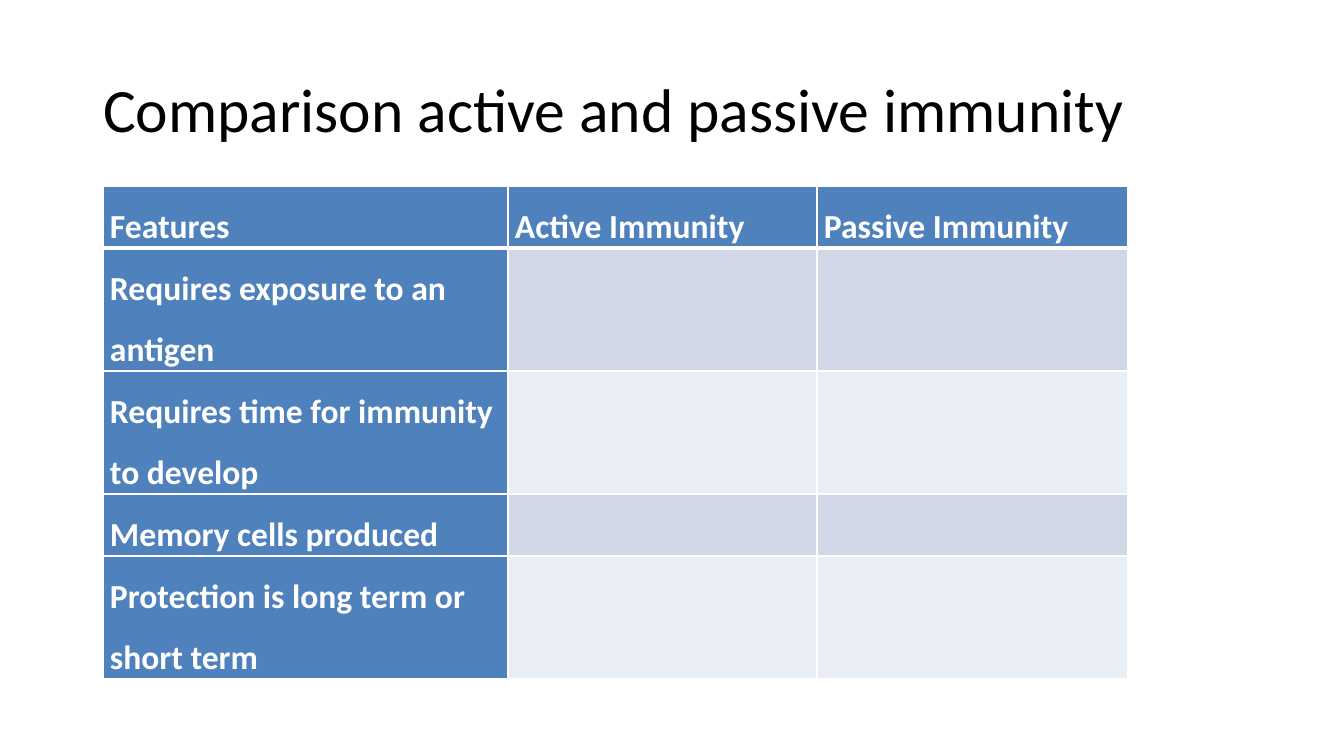
from lxml import etree
from pptx import Presentation
from pptx.dml.color import RGBColor
from pptx.enum.text import MSO_ANCHOR, PP_ALIGN
from pptx.oxml.ns import qn
from pptx.util import Pt

TOP, MIDDLE = MSO_ANCHOR.TOP, MSO_ANCHOR.MIDDLE
LEFT = PP_ALIGN.LEFT

TITLE = "Comparison active and passive immunity"
HEADERS = ["Features", "Active Immunity", "Passive Immunity"]
FEATURES = [
    "Requires exposure to an antigen",
    "Requires time for immunity to develop",
    "Memory cells produced",
    "Protection is long term or short term",
]
ROWS = [HEADERS] + [[feature, "", ""] for feature in FEATURES]

SLIDE_SIZE = (1344, 756)
TITLE_BOX = (93, 40, 1159, 146)
TABLE_ORIGIN = (103, 186)
COLUMN_WIDTHS = [405, 309, 311]
ROW_HEIGHTS = [62, 115, 115, 62, 115]

BLACK, WHITE, BLUE = "000000", "FFFFFF", "4F81BD"
BANDS = ["D0D8E8", "E9EDF4"]
TITLE_FONT = {"name": "Calibri", "size": Pt(44), "bold": False}
CELL_FONT = {"name": "Calibri", "size": Pt(24), "bold": True}
TITLE_PARA = {"alignment": LEFT, "line_spacing": 0.9}
CELL_PARA = {"alignment": LEFT, "line_spacing": 1.5, "space_after": Pt(8)}


def px(length):
    return round(length * 914400 / 100.8)


def color(value):
    return RGBColor.from_string(value)


def apply(target, formats):
    for name, value in formats.items():
        setattr(target, name, value)


def write(frame, text, para_format, font_format, font_color):
    para = frame.paragraphs[0]
    apply(para, para_format)
    span = para.add_run()
    span.text = text
    apply(span.font, font_format)
    span.font.color.rgb = color(font_color)


def add_borders(cell, widths):
    """Draw white cell borders; widths maps the sides L, R, T, B to points."""
    properties = cell._tc.get_or_add_tcPr()
    for side, width in widths.items():
        line = etree.SubElement(properties, qn(f"a:ln{side}"), w=str(Pt(width)))
        fill = etree.SubElement(line, qn("a:solidFill"))
        etree.SubElement(fill, qn("a:srgbClr"), val=WHITE)


def add_title(page):
    title = page.shapes.title
    title.left, title.top, title.width, title.height = map(px, TITLE_BOX)
    apply(title.text_frame, {"vertical_anchor": MIDDLE, "word_wrap": True})
    write(title.text_frame, TITLE, TITLE_PARA, TITLE_FONT, BLACK)


def add_comparison(page):
    size = (sum(COLUMN_WIDTHS), sum(ROW_HEIGHTS))
    table = page.shapes.add_table(
        len(ROWS), len(HEADERS), *map(px, TABLE_ORIGIN + size)).table
    for column, width in zip(table.columns, COLUMN_WIDTHS):
        column.width = px(width)
    for r, texts in enumerate(ROWS):
        table.rows[r].height = px(ROW_HEIGHTS[r])
        for c, text in enumerate(texts):
            cell = table.cell(r, c)
            apply(cell, {
                "margin_left": px(7), "margin_right": px(7),
                "margin_top": 0, "margin_bottom": 0,
                "vertical_anchor": MIDDLE if r == 1 else TOP,
            })
            add_borders(cell, {"L": 1, "R": 1, "T": 3 if r == 1 else 1,
                               "B": 3 if r == 0 else 1})
            cell.fill.solid()
            is_heading = r == 0 or c == 0
            cell.fill.fore_color.rgb = color(BLUE if is_heading else BANDS[(r - 1) % 2])
            if text:
                write(cell.text_frame, text, CELL_PARA, CELL_FONT, WHITE)


def main():
    deck = Presentation()
    deck.slide_width, deck.slide_height = map(px, SLIDE_SIZE)
    page = deck.slides.add_slide(deck.slide_layouts[5])
    add_title(page)
    add_comparison(page)
    deck.save("out.pptx")


if __name__ == "__main__":
    main()
